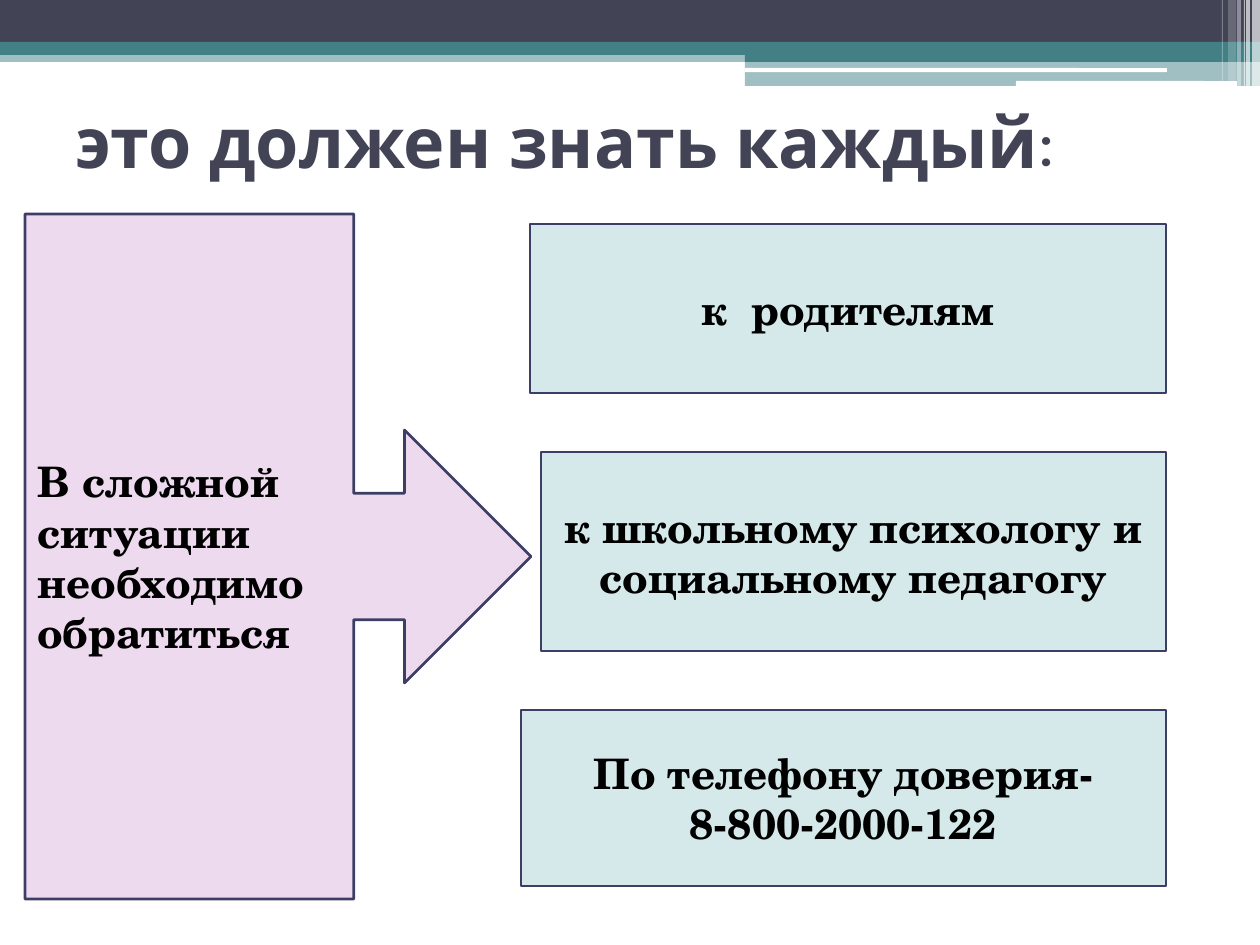
from lxml import etree
from pptx import Presentation
from pptx import util as u
from pptx.dml.color import RGBColor
from pptx.enum import shapes, text
from pptx.oxml import ns

PX = 914400 / 126
SLATE = RGBColor(0x42, 0x44, 0x56)
TEAL = RGBColor(0x43, 0x80, 0x86)
WHITE = RGBColor(0xFF, 0xFF, 0xFF)
BLACK = RGBColor(0x00, 0x00, 0x00)
PINK = RGBColor(0xED, 0xDA, 0xEE)
PALE_TEAL = RGBColor(0xD6, 0xE9, 0xEA)
OUTLINE = RGBColor(0x3D, 0x3E, 0x66)

RECTANGLE = shapes.MSO_SHAPE.RECTANGLE
ROUNDED = shapes.MSO_SHAPE.ROUNDED_RECTANGLE
CALLOUT = shapes.MSO_SHAPE.RIGHT_ARROW_CALLOUT
LEFT = text.PP_ALIGN.LEFT
CENTER = text.PP_ALIGN.CENTER

BANDS = [
    (RECTANGLE, (0, 50, 1260, 12), TEAL, 50),
    (RECTANGLE, (0, 0, 1260, 43), SLATE, 100),
    (RECTANGLE, (0, 42, 1260, 13), TEAL, 100),
    (RECTANGLE, (745, 49, 515, 13), TEAL, 100),
    (RECTANGLE, (745, 61, 515, 25), TEAL, 50),
    (ROUNDED, (745, 68, 422, 4), WHITE, 100),
    (ROUNDED, (1016, 81, 221, 5), WHITE, 100),
]
STRIPES = [
    (1252, 8, 86, 65),
    (1246, 4, 86, 65),
    (1244, 1, 86, 60),
    (1237, 4, 86, 40),
    (1228, 8, 81, 20),
    (1222, 1, 81, 30),
]
ANSWERS = [
    ((530, 224, 636, 169), ["к  родителям"]),
    ((541, 452, 625, 199), ["к школьному психологу и социальному педагогу"]),
    ((521, 710, 645, 176), ["По телефону доверия-", "8-800-2000-122"]),
]


def emu(box):
    return [u.Emu(round(length * PX)) for length in box]


def apply(target, values):
    for name, value in values.items():
        setattr(target, name, value)


class SlideBuilder:
    title_font = {"name": "Karla", "size": u.Pt(40)}
    body_font = {"name": "TeX Gyre Schola", "size": u.Pt(24), "bold": True}
    frame_format = {"word_wrap": True, "vertical_anchor": text.MSO_ANCHOR.MIDDLE}

    def __init__(self, slide):
        self.slide = slide

    def shape(self, kind, box, color):
        shape = self.slide.shapes.add_shape(kind, *emu(box))
        shape.shadow.inherit = False
        shape.fill.solid()
        shape.fill.fore_color.rgb = color
        return shape

    def band(self, kind, box, color, opacity=100):
        shape = self.shape(kind, box, color)
        shape.line.fill.background()
        if opacity < 100:
            fill_color = shape.fill._xPr.find(".//" + ns.qn("a:srgbClr"))
            etree.SubElement(fill_color, ns.qn("a:alpha"), val=str(opacity * 1000))

    def run(self, paragraph, words, font, color):
        run = paragraph.add_run()
        run.text = words
        apply(run.font, font)
        run.font.color.rgb = color

    def title(self, box, runs):
        title = self.slide.shapes.title
        apply(title, dict(zip(("left", "top", "width", "height"), emu(box))))
        frame = title.text_frame
        apply(frame, {**self.frame_format, "auto_size": text.MSO_AUTO_SIZE.NONE})
        paragraph = frame.paragraphs[0]
        paragraph.alignment = LEFT
        for words, bold in runs:
            self.run(paragraph, words, {**self.title_font, "bold": bold}, SLATE)

    def panel(self, kind, box, color, lines, alignment):
        shape = self.shape(kind, box, color)
        shape.line.color.rgb = OUTLINE
        shape.line.width = u.Pt(1.5)
        frame = shape.text_frame
        apply(frame, self.frame_format)
        for index, line in enumerate(lines):
            paragraph = frame.add_paragraph() if index else frame.paragraphs[0]
            paragraph.alignment = alignment
            self.run(paragraph, line, self.body_font, BLACK)


def main():
    presentation = Presentation()
    apply(presentation, dict(zip(("slide_width", "slide_height"), emu((1260, 945)))))
    slide = presentation.slides.add_slide(presentation.slide_layouts[5])
    builder = SlideBuilder(slide)

    for kind, box, color, opacity in BANDS:
        builder.band(kind, box, color, opacity)
    for left, width, height, opacity in STRIPES:
        builder.band(RECTANGLE, (left, 0, width, height), WHITE, opacity)

    builder.title((63, 66, 1134, 149), [("это должен знать каждый", True), (":", False)])
    builder.panel(CALLOUT, (25, 214, 506, 685), PINK,
                  ["В сложной ситуации необходимо обратиться"], LEFT)
    for box, lines in ANSWERS:
        builder.panel(RECTANGLE, box, PALE_TEAL, lines, CENTER)

    presentation.save("out.pptx")


if __name__ == "__main__":
    main()
